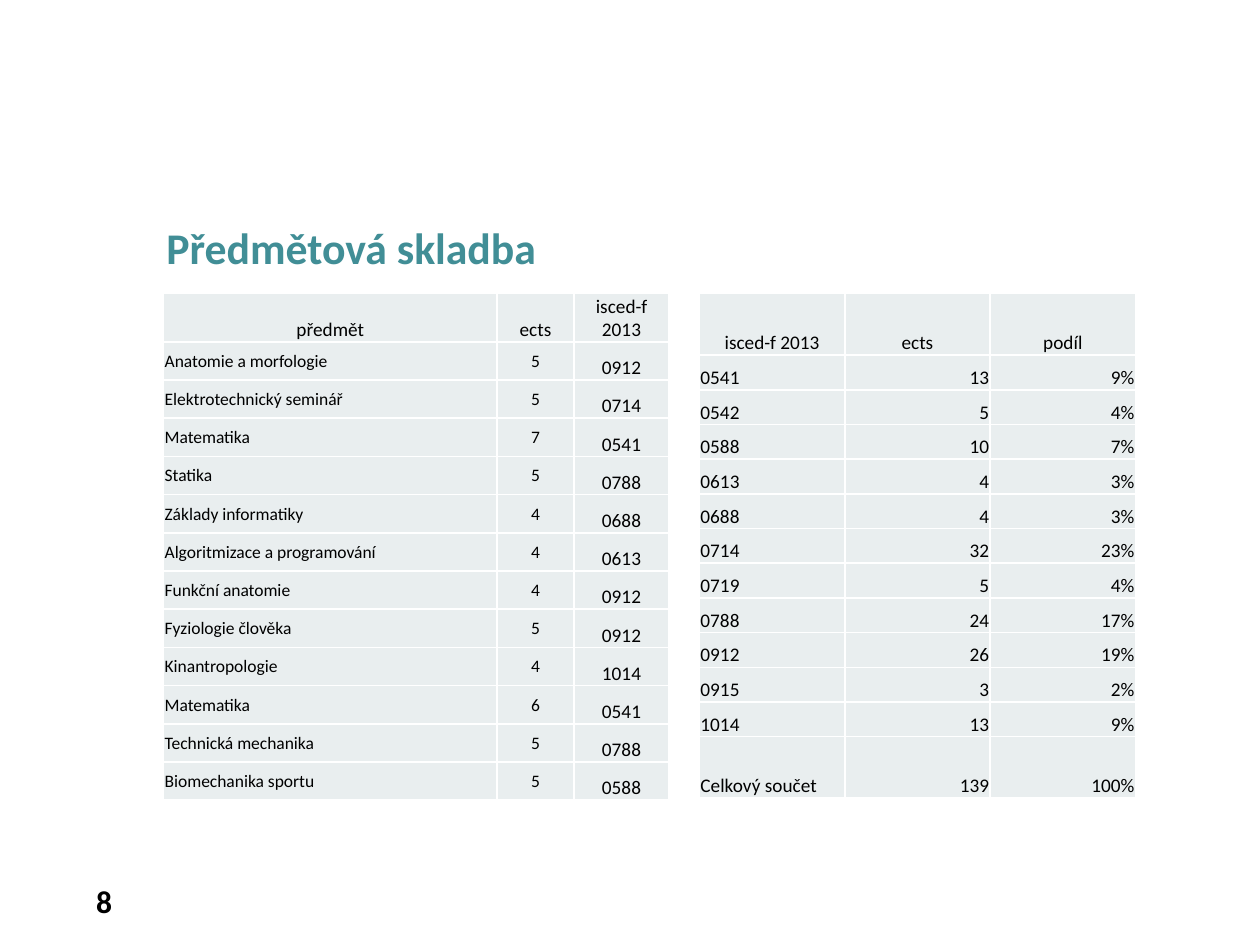
from lxml.etree import SubElement
from pptx import Presentation
from pptx.dml.color import RGBColor
from pptx.enum.text import MSO_ANCHOR as Anchor, MSO_AUTO_SIZE as AutoSize, PP_ALIGN as Align
from pptx.oxml.ns import qn
from pptx.util import Cm, Pt

TITLE = "Předmětová skladba"
PAGE_NUMBER = "8"
FONT = "Calibri"
BLACK, WHITE, TEAL, PALE = "000000", "FFFFFF", "418E96", "E9EEEF"

SUBJECTS = [
    ("předmět", "ects", "isced-f 2013"),
    ("Anatomie a morfologie", "5", "0912"),
    ("Elektrotechnický seminář", "5", "0714"),
    ("Matematika", "7", "0541"),
    ("Statika", "5", "0788"),
    ("Základy informatiky", "4", "0688"),
    ("Algoritmizace a programování", "4", "0613"),
    ("Funkční anatomie", "4", "0912"),
    ("Fyziologie člověka", "5", "0912"),
    ("Kinantropologie", "4", "1014"),
    ("Matematika", "6", "0541"),
    ("Technická mechanika", "5", "0788"),
    ("Biomechanika sportu", "5", "0588"),
]
SHARES = [
    ("isced-f 2013", "ects", "podíl"),
    ("0541", "13", "9%"),
    ("0542", "5", "4%"),
    ("0588", "10", "7%"),
    ("0613", "4", "3%"),
    ("0688", "4", "3%"),
    ("0714", "32", "23%"),
    ("0719", "5", "4%"),
    ("0788", "24", "17%"),
    ("0912", "26", "19%"),
    ("0915", "3", "2%"),
    ("1014", "13", "9%"),
    ("Celkový součet", "139", "100%"),
]
HEADER_STYLE = (11, Align.CENTER, Anchor.BOTTOM)
TABLES = [
    {
        "rows": SUBJECTS,
        "left": 3.3,
        "widths": [6.72, 1.55, 1.92],
        "heights": [0.97] + [0.77] * 12,
        "styles": [
            (10, Align.LEFT, Anchor.MIDDLE),
            (10, Align.CENTER, Anchor.MIDDLE),
            (11, Align.CENTER, Anchor.BOTTOM),
        ],
    },
    {
        "rows": SHARES,
        "left": 14.1,
        "widths": [2.93] * 3,
        "heights": [1.24] + [0.7] * 11 + [1.24],
        "styles": [
            (11, Align.LEFT, Anchor.BOTTOM),
            (11, Align.RIGHT, Anchor.BOTTOM),
            (11, Align.RIGHT, Anchor.BOTTOM),
        ],
    },
]
TABLE_TOP = 5.92


def color(hex_value):
    return RGBColor.from_string(hex_value)


def write(text_frame, text, size=11, align=Align.LEFT, fill=BLACK, bold=False):
    text_frame.word_wrap = True
    paragraph = text_frame.paragraphs[0]
    paragraph.alignment = align
    run = paragraph.add_run()
    run.text = text
    font = run.font
    font.name, font.size, font.bold = FONT, Pt(size), bold
    font.color.rgb = color(fill)


def place(shape, left, top, width, height):
    shape.left, shape.top, shape.width, shape.height = map(Cm, (left, top, width, height))


def add_borders(cell):
    properties = cell._tc.get_or_add_tcPr()
    for side in ("a:lnL", "a:lnR", "a:lnT", "a:lnB"):
        line = SubElement(properties, qn(side), w=str(Pt(1)))
        SubElement(SubElement(line, qn("a:solidFill")), qn("a:srgbClr"), val=WHITE)


def format_cell(cell, text, style):
    size, align, anchor = style
    cell.margin_left = cell.margin_right = cell.margin_top = Cm(0.02)
    cell.margin_bottom = 0
    cell.vertical_anchor = anchor
    add_borders(cell)
    cell.fill.solid()
    cell.fill.fore_color.rgb = color(PALE)
    write(cell.text_frame, text, size=size, align=align)


def add_table(slide, rows, left, widths, heights, styles):
    frame = slide.shapes.add_table(
        len(rows), len(widths), Cm(left), Cm(TABLE_TOP), Cm(sum(widths)), Cm(sum(heights))
    )
    table = frame.table
    table.horz_banding = False
    for column, width in zip(table.columns, widths):
        column.width = Cm(width)
    for row, height in zip(table.rows, heights):
        row.height = Cm(height)
    for row_index, values in enumerate(rows):
        for column_index, text in enumerate(values):
            style = styles[column_index] if row_index else HEADER_STYLE
            format_cell(table.cell(row_index, column_index), text, style)


def main():
    presentation = Presentation()
    presentation.slide_width, presentation.slide_height = Cm(25.4), Cm(19.05)
    slide = presentation.slides.add_slide(presentation.slide_layouts[5])

    number = slide.shapes.add_textbox(Cm(0.71), Cm(17.65), Cm(1.8), Cm(1.02))
    write(number.text_frame, PAGE_NUMBER, size=18, align=Align.RIGHT, bold=True)

    title = slide.shapes.title
    place(title, 3.1, 4.32, 21.03, 14)
    title.text_frame.vertical_anchor = Anchor.TOP
    title.text_frame.auto_size = AutoSize.NONE
    write(title.text_frame, TITLE, size=25, fill=TEAL, bold=True)

    for table in TABLES:
        add_table(slide, **table)
    presentation.save("out.pptx")


if __name__ == "__main__":
    main()
